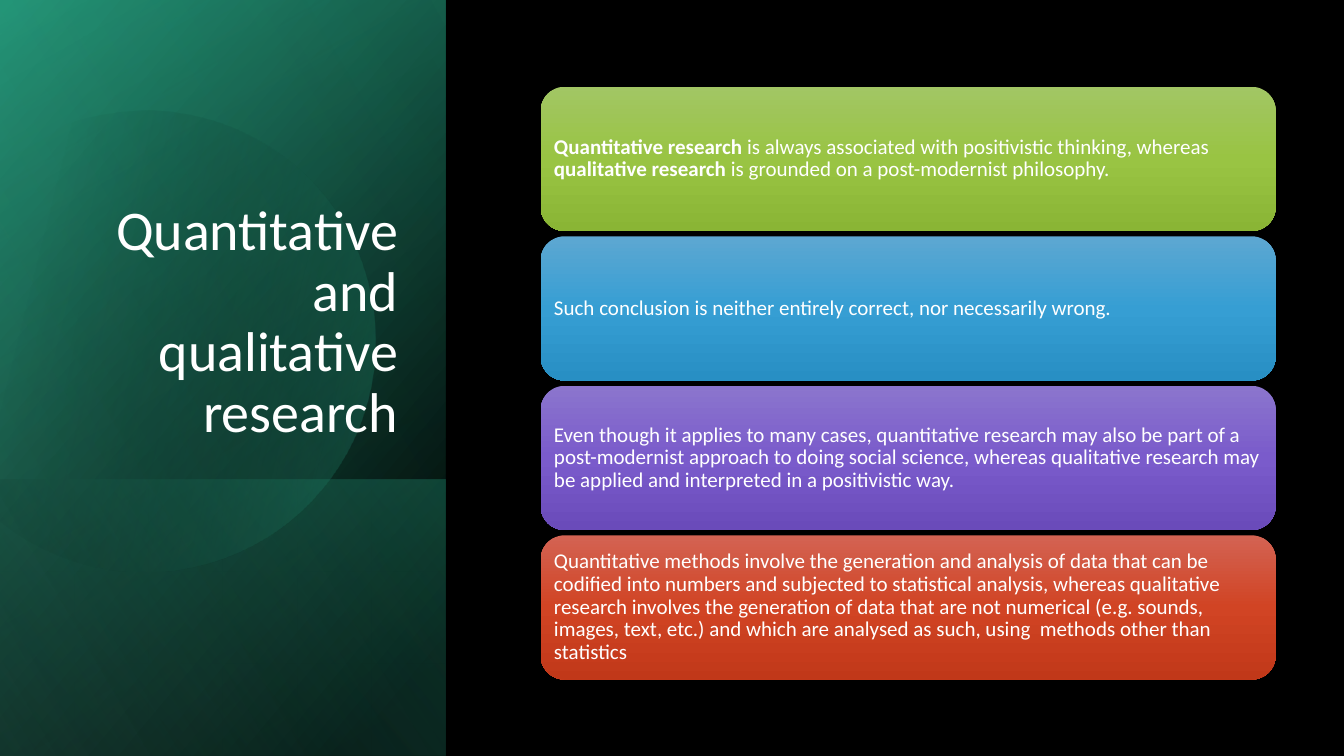
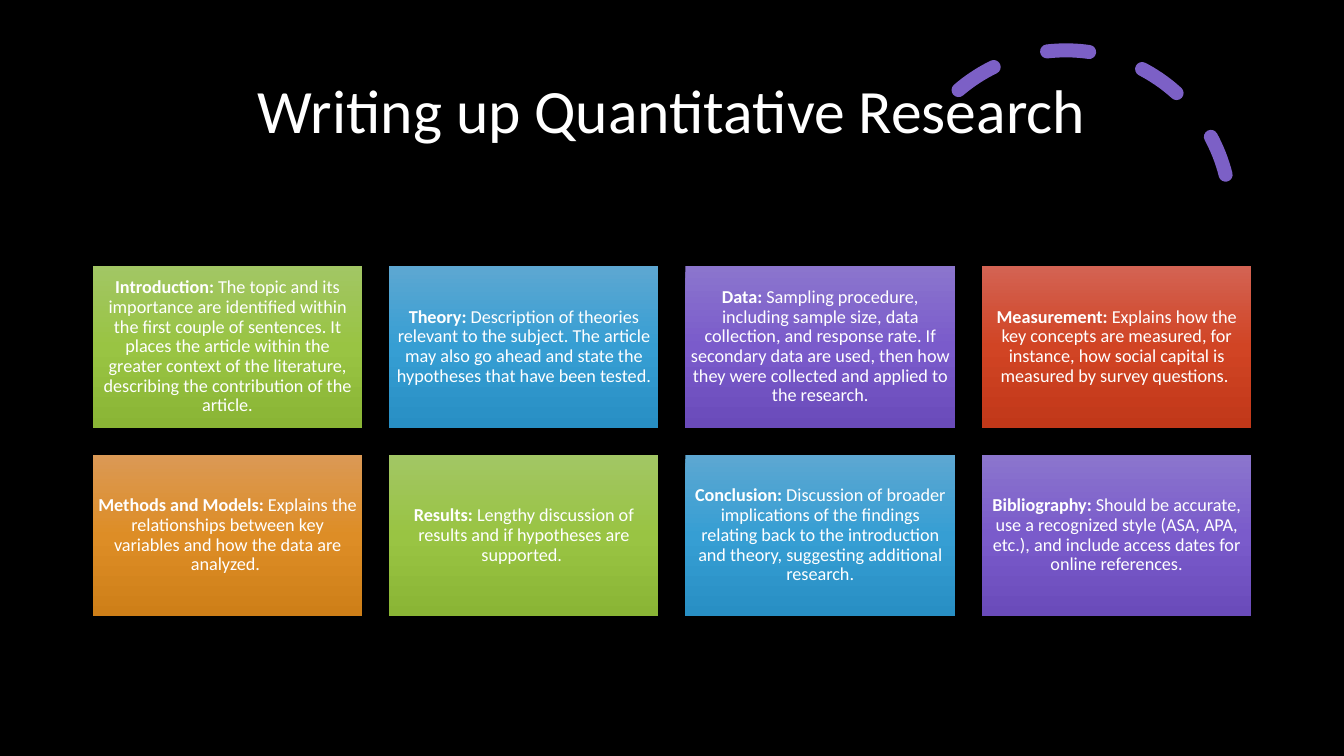
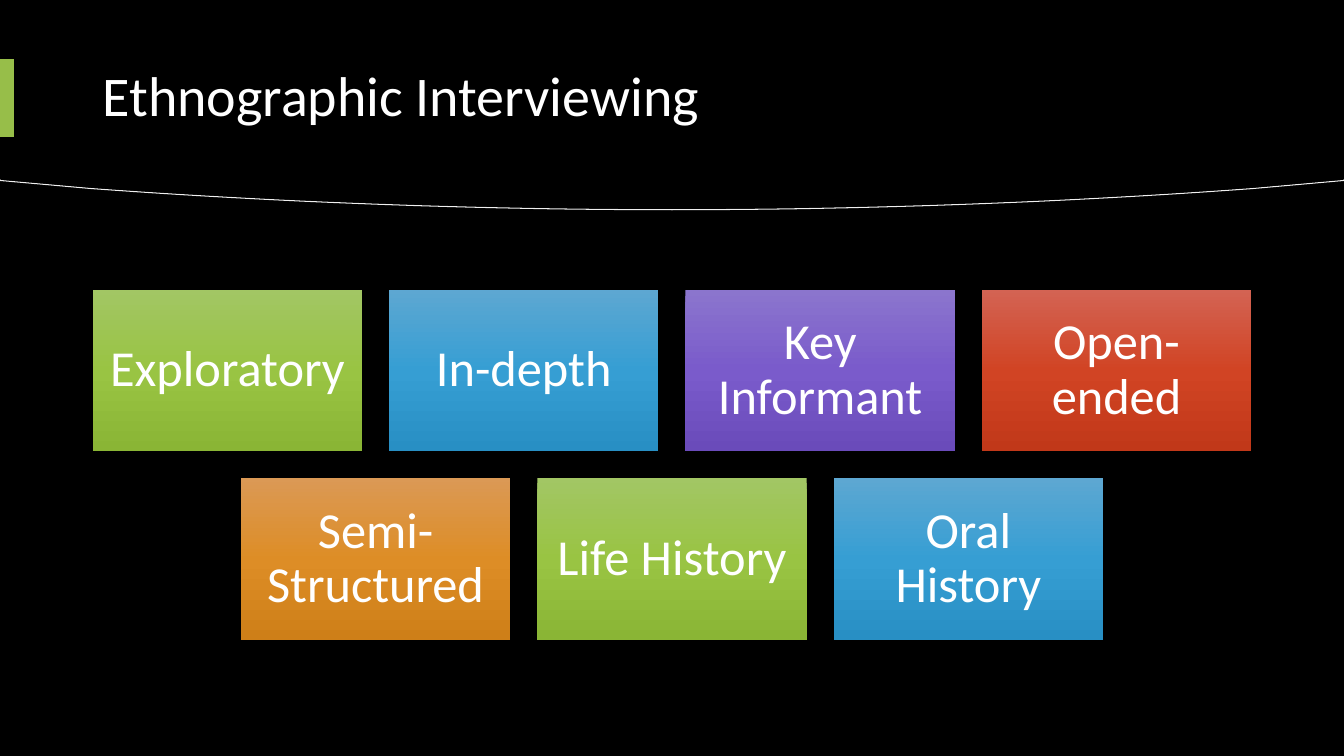
import math

from lxml import etree
from pptx import Presentation
from pptx.dml.color import RGBColor
from pptx.enum.dml import MSO_LINE
from pptx.enum.shapes import MSO_SHAPE
from pptx.enum.text import MSO_ANCHOR, MSO_AUTO_SIZE, PP_ALIGN
from pptx.oxml.ns import qn
from pptx.util import Pt

RECTANGLE = MSO_SHAPE.RECTANGLE
ROUNDED = MSO_SHAPE.ROUNDED_RECTANGLE
ARC = MSO_SHAPE.ARC
DASH = MSO_LINE.DASH
LEFT, CENTER, RIGHT = PP_ALIGN.LEFT, PP_ALIGN.CENTER, PP_ALIGN.RIGHT
MIDDLE, BOTTOM = MSO_ANCHOR.MIDDLE, MSO_ANCHOR.BOTTOM
NO_AUTOFIT = MSO_AUTO_SIZE.NONE

FONT = "Calibri"
LINE_SPACING = 0.9
BLACK = RGBColor(0x00, 0x00, 0x00)
WHITE = RGBColor(0xFF, 0xFF, 0xFF)
PALE_GREY = RGBColor(0xEF, 0xEF, 0xEF)
TEAL = RGBColor(0x29, 0xAF, 0x8C)
DEEP_TEAL = RGBColor(0x1F, 0x83, 0x69)
LIGHT_TEAL = RGBColor(0x70, 0xDE, 0xC1)
ACCENT_GREEN = RGBColor(0x97, 0xBE, 0x49)
ACCENT_PURPLE = RGBColor(0x7C, 0x60, 0xC6)
GREEN = (RGBColor(0xA2, 0xC6, 0x64), RGBColor(0x99, 0xC4, 0x43), RGBColor(0x8A, 0xB5, 0x35))
BLUE = (RGBColor(0x5D, 0xA7, 0xD2), RGBColor(0x36, 0x9E, 0xD3), RGBColor(0x28, 0x8F, 0xC4))
PURPLE = (RGBColor(0x8B, 0x75, 0xCD), RGBColor(0x7A, 0x5B, 0xCB), RGBColor(0x6A, 0x4B, 0xBA))
RED = (RGBColor(0xD3, 0x63, 0x53), RGBColor(0xD1, 0x44, 0x24), RGBColor(0xC1, 0x38, 0x19))
ORANGE = (RGBColor(0xDB, 0x99, 0x55), RGBColor(0xDD, 0x8D, 0x26), RGBColor(0xCE, 0x7F, 0x18))
CARD_COLOURS = (GREEN, BLUE, PURPLE, RED, ORANGE)

TITLE_ONLY = 5
SLIDE_W, SLIDE_H = 960, 540
CONTENT_LEFT, CONTENT_W = 66.24, 827.52

GRID_COLUMNS = 4
GAP_RATIO = 0.1
HEIGHT_RATIO = 0.6
CARD_W = CONTENT_W / (GRID_COLUMNS + (GRID_COLUMNS - 1) * GAP_RATIO)
CARD_H = CARD_W * HEIGHT_RATIO
CARD_GAP = CARD_W * GAP_RATIO

STACK_LEFT, STACK_TOP, STACK_W = 386.2, 62, 525
STACK_CARD_H, STACK_GAP = 103, 3.8

PANEL_W = 318.2
LOWER_PANEL_TOP = 342.7
PANEL_BASE = [(8, BLACK, 100), (100, DEEP_TEAL, 100)]
PANEL_TINT = [(0, BLACK, 0), (99, TEAL, 46)]
PANEL_FOOT = [(2, TEAL, 29), (100, BLACK, 30)]
PANEL_SHEEN = [(0, BLACK, 0), (99, LIGHT_TEAL, 11)]
GLOW = [(29, BLACK, 0), (100, TEAL, 43)]

GLOW_TILT = 16.1
GLOW_CENTER = (114.1, 240.8)
GLOW_START = (107.3, 79.2)
GLOW_SEGMENTS = (
    ((177.1, 80.6), (241.2, 127.4), (261.4, 198)),
    ((286.6, 285.8), (236.2, 376.6), (149, 401.8)),
    ((94.3, 417.6), (38.2, 403.9), (-2.2, 370.1)),
    ((-10.8, 362.2),),
    ((-10.8, 126),),
    ((0, 115.9),),
    ((16.6, 102.2), (36, 92.2), (57.6, 85.7)),
    ((74.2, 81.4), (90.7, 79.2), GLOW_START),
)

PARADIGMS = (
    ("Quantitative research ",
     "is always associated with positivistic thinking, whereas ",
     "qualitative research ",
     "is grounded on a post-modernist philosophy."),
    ("Such conclusion is neither entirely correct, nor necessarily wrong.",),
    ("Even though it applies to many cases, quantitative research may also be part "
     "of a post-modernist approach to doing social science, whereas qualitative "
     "research may be applied and interpreted in a positivistic way.",),
    ("Quantitative methods involve the generation and analysis of data that can be "
     "codified into numbers and subjected to statistical analysis, whereas "
     "qualitative research involves the generation of data that are not numerical "
     "(e.g. sounds, images, text, etc.) and which are analysed as such, using  "
     "methods other than statistics",),
)
SECTIONS = (
    ("Introduction:",
     " The topic and its importance are identified within the first couple of "
     "sentences. It places the article within the greater context of the "
     "literature, describing the contribution of the article."),
    ("Theory:",
     " Description of theories relevant to the subject. The article may also go "
     "ahead and state the hypotheses that have been tested."),
    ("Data:",
     " Sampling procedure, including sample size, data collection, and response "
     "rate. If secondary data are used, then how they were collected and applied "
     "to the research."),
    ("Measurement:",
     " Explains how the key concepts are measured, for instance, how social "
     "capital is measured by survey questions. "),
    ("Methods and Models: ",
     "Explains the relationships between key variables and how the data are "
     "analyzed. "),
    ("Results: ",
     "Lengthy discussion of results and if hypotheses are supported. "),
    ("Conclusion: ",
     "Discussion of broader implications of the findings relating back to the "
     "introduction and theory, suggesting additional research."),
    ("Bibliography:",
     " Should be accurate, use a recognized style (ASA, APA, etc.), and include "
     "access dates for online references."),
)
INTERVIEW_TYPES = (
    ("Exploratory",), ("In-depth",), ("Key Informant",), ("Open-ended",),
    ("Semi-Structured",), ("Life History",), ("Oral History",),
)


def write_text(frame, phrases, *, size, align=LEFT, anchor=MIDDLE, inset=None):
    frame.word_wrap = True
    frame.auto_size = NO_AUTOFIT
    frame.vertical_anchor = anchor
    if inset is not None:
        frame.margin_left = frame.margin_right = Pt(inset)
        frame.margin_top = frame.margin_bottom = Pt(inset)
    paragraph = frame.paragraphs[0]
    paragraph.alignment = align
    paragraph.line_spacing = LINE_SPACING
    has_labels = len(phrases) > 1
    for index, phrase in enumerate(phrases):
        run = paragraph.add_run()
        run.text = phrase
        run.font.name = FONT
        run.font.size = Pt(size)
        run.font.color.rgb = WHITE
        run.font.bold = has_labels and index % 2 == 0


def add_title(slide, text, box, **text_format):
    title = slide.shapes.title
    title.left, title.top, title.width, title.height = map(Pt, box)
    write_text(title.text_frame, (text,), **text_format)
    slide.shapes._spTree.append(title._element)


def fill_solid(shape, colour):
    shape.fill.solid()
    shape.fill.fore_color.rgb = colour


def fill_gradient(shape, stops, angle):
    shape.fill.gradient()
    shape.fill.gradient_angle = 360 - angle
    stop_list = shape._element.spPr.find(qn("a:gradFill")).find(qn("a:gsLst"))
    for default_stop in list(stop_list):
        stop_list.remove(default_stop)
    for position, colour, opacity in stops:
        stop = etree.SubElement(stop_list, qn("a:gs"), pos=str(position * 1000))
        value = etree.SubElement(stop, qn("a:srgbClr"), val=str(colour))
        if opacity < 100:
            etree.SubElement(value, qn("a:alpha"), val=str(opacity * 1000))


def strip_effects(shape):
    shape.shadow.inherit = False
    shape.line.fill.background()
    return shape


def add_preset(slide, kind, box):
    return strip_effects(slide.shapes.add_shape(kind, *map(Pt, box)))


def add_outline(slide, points):
    start, *rest = [(Pt(x), Pt(y)) for x, y in points]
    builder = slide.shapes.build_freeform(*start, scale=1.0)
    builder.add_line_segments(rest, close=True)
    return strip_effects(builder.convert_to_shape())


def add_card(slide, kind, box, index, phrases, **text_format):
    card = add_preset(slide, kind, box)
    top, middle, bottom = CARD_COLOURS[index % len(CARD_COLOURS)]
    fill_gradient(card, [(0, top, 100), (50, middle, 100), (100, bottom, 100)], 90)
    write_text(card.text_frame, phrases, **text_format)


def add_card_stack(slide, entries, **text_format):
    for index, phrases in enumerate(entries):
        top = STACK_TOP + index * (STACK_CARD_H + STACK_GAP)
        box = (STACK_LEFT, top, STACK_W, STACK_CARD_H)
        add_card(slide, ROUNDED, box, index, phrases, **text_format)


def add_card_grid(slide, grid_top, entries, **text_format):
    for index, phrases in enumerate(entries):
        row, column = divmod(index, GRID_COLUMNS)
        cards_in_row = min(GRID_COLUMNS, len(entries) - row * GRID_COLUMNS)
        row_width = cards_in_row * (CARD_W + CARD_GAP) - CARD_GAP
        left = (SLIDE_W - row_width) / 2 + column * (CARD_W + CARD_GAP)
        top = grid_top + row * (CARD_H + CARD_GAP)
        add_card(slide, RECTANGLE, (left, top, CARD_W, CARD_H), index, phrases,
                 align=CENTER, **text_format)


def add_side_panel(slide, stops, angle, top=0):
    length = SLIDE_H - top
    left_before_turn = (PANEL_W - length) / 2
    top_before_turn = top + (length - PANEL_W) / 2
    panel = add_preset(slide, RECTANGLE,
                       (left_before_turn, top_before_turn, length, PANEL_W))
    panel.rotation = 90
    panel._element.spPr.find(qn("a:xfrm")).set("flipH", "1")
    fill_gradient(panel, stops, angle)


def bezier_point(t, anchors):
    weights = ((1 - t) ** 3, 3 * t * (1 - t) ** 2, 3 * t ** 2 * (1 - t), t ** 3)
    return tuple(sum(weight * anchor[axis] for weight, anchor in zip(weights, anchors))
                 for axis in (0, 1))


def trace(start, segments, steps=24):
    points = [start]
    for segment in segments:
        if len(segment) == 1:
            points += segment
        else:
            anchors = (points[-1], *segment)
            points += [bezier_point(step / steps, anchors) for step in range(1, steps + 1)]
    return points


def turn(points, center, degrees):
    cosine, sine = math.cos(math.radians(degrees)), math.sin(math.radians(degrees))
    cx, cy = center
    return [(cx + (x - cx) * cosine - (y - cy) * sine,
             cy + (x - cx) * sine + (y - cy) * cosine) for x, y in points]


def add_glow_circle(slide):
    upright = turn(trace(GLOW_START, GLOW_SEGMENTS), GLOW_CENTER, GLOW_TILT)
    circle = add_outline(slide, upright)
    circle.rotation = 360 - GLOW_TILT
    fill_gradient(circle, GLOW, 30)


def add_header_band(slide, depth):
    left_edge = trace((0, depth - 20.9), (
        ((65.5, depth - 15.1),),
        ((193, depth - 5.8), (333.4, depth), (SLIDE_W / 2, depth)),
    ))
    right_edge = [(SLIDE_W - x, y) for x, y in reversed(left_edge[:-1])]
    band = add_outline(slide, [(0, 0), *left_edge, *right_edge, (SLIDE_W, 0)])
    fill_solid(band, BLACK)
    return band


def build_paradigms(slide):
    add_side_panel(slide, PANEL_BASE, 50)
    add_side_panel(slide, PANEL_TINT, 30)
    add_side_panel(slide, PANEL_FOOT, 130, top=LOWER_PANEL_TOP)
    add_glow_circle(slide)
    add_side_panel(slide, PANEL_SHEEN, 120)
    add_title(slide, "Quantitative and qualitative research",
              (46, 132.5, 245.5, 188.6), size=40, align=RIGHT, anchor=BOTTOM)
    add_card_stack(slide, PARADIGMS, size=15, inset=4.5)


def build_sections(slide):
    dashed_arc = add_preset(slide, ARC, (643.7, 36, 235.4, 235.4))
    dashed_arc.adjustments[0] = 146.129
    dashed_arc.adjustments[1] = 0
    dashed_arc.rotation = 345.8
    dashed_arc.fill.background()
    dashed_arc.line.color.rgb = ACCENT_PURPLE
    dashed_arc.line.width = Pt(10)
    dashed_arc.line.dash_style = DASH
    dashed_arc._element.spPr.find(qn("a:ln")).set("cap", "rnd")
    add_title(slide, "Writing up Quantitative Research",
              (CONTENT_LEFT, 28.8, CONTENT_W, 104.4), size=44, align=CENTER)
    add_card_grid(slide, 190, SECTIONS, size=13, inset=3.9)


def build_interviewing(slide):
    edged_band = add_header_band(slide, 149.8)
    edged_band.line.color.rgb = PALE_GREY
    edged_band.line.width = Pt(0.75)
    add_header_band(slide, 149.1)
    add_title(slide, "Ethnographic Interviewing",
              (CONTENT_LEFT, 20.2, CONTENT_W, 100), size=40)
    title_marker = add_preset(slide, RECTANGLE, (0, 42.3, 10, 55.6))
    fill_solid(title_marker, ACCENT_GREEN)
    add_card_grid(slide, 207, INTERVIEW_TYPES, size=36, inset=10.8)


def main():
    deck = Presentation()
    deck.slide_width, deck.slide_height = Pt(SLIDE_W), Pt(SLIDE_H)
    fill_solid(deck.slide_master.background, BLACK)
    for build in (build_paradigms, build_sections, build_interviewing):
        build(deck.slides.add_slide(deck.slide_layouts[TITLE_ONLY]))
    deck.save("out.pptx")


if __name__ == "__main__":
    main()
